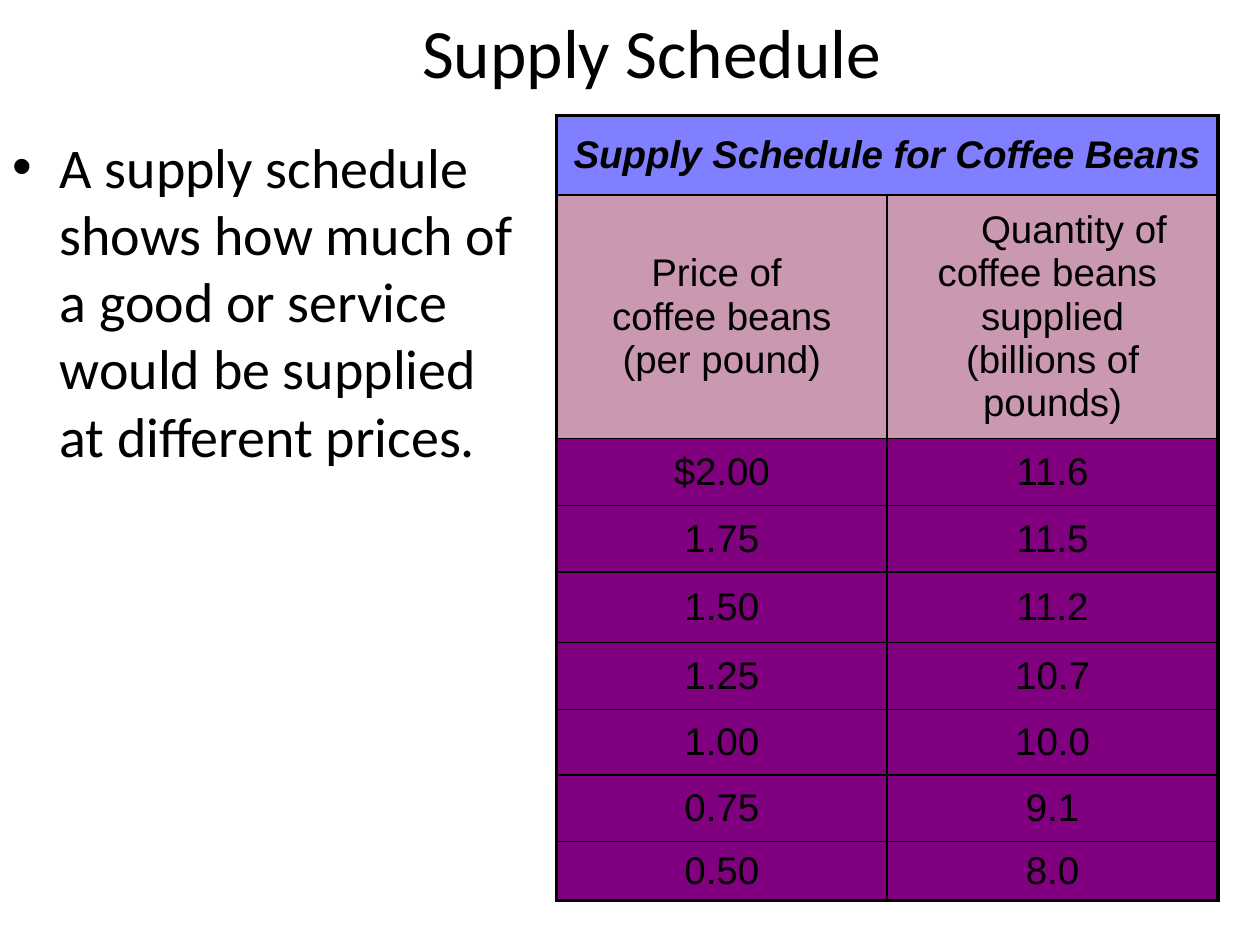
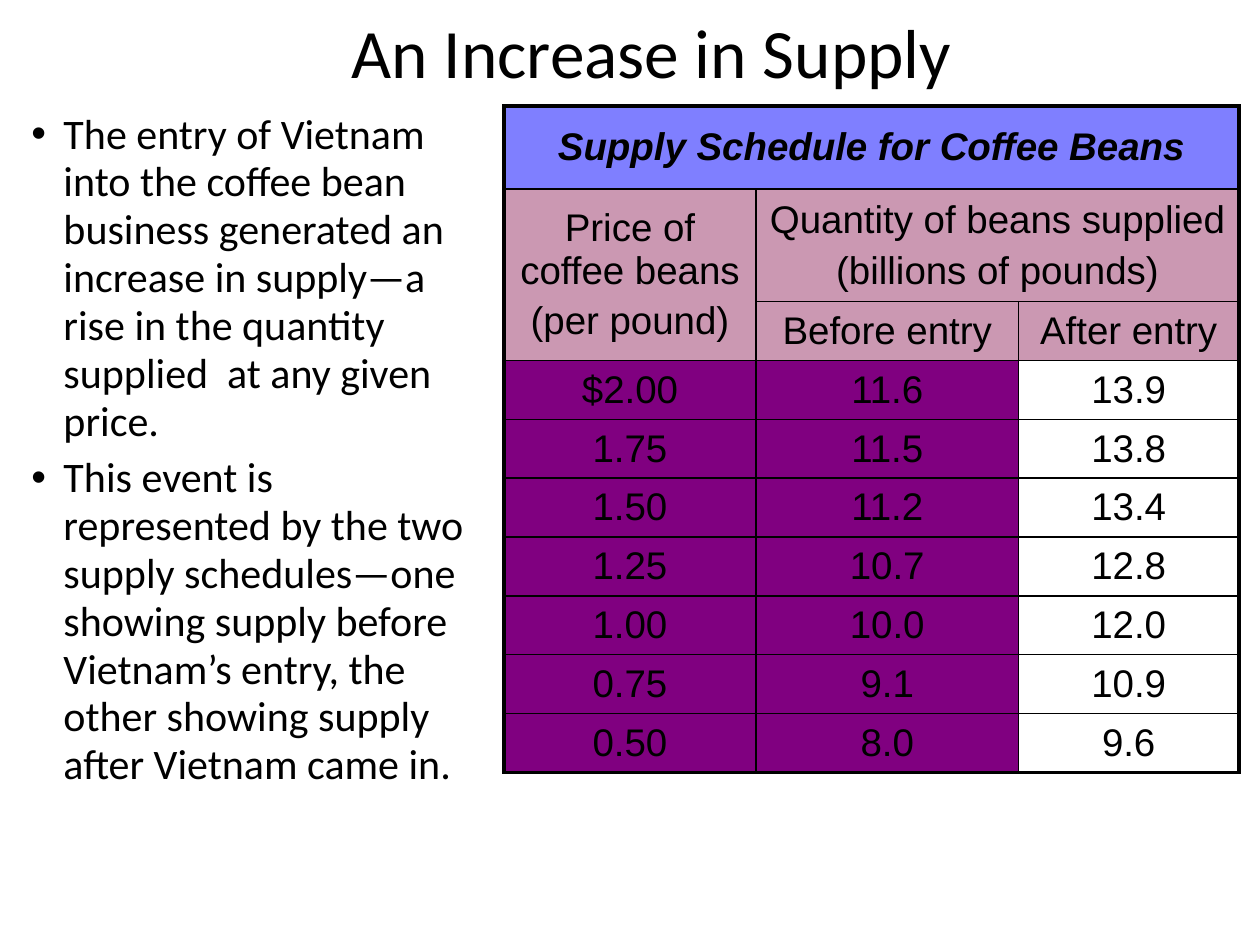
from dataclasses import dataclass

from lxml import etree
from pptx import Presentation
from pptx.dml import color as col
from pptx.enum import text as t
from pptx.oxml import ns
from pptx.util import Pt


@dataclass(frozen=True)
class Theme:
    ink: str = "000000"
    blue: str = "0000FF"
    rose: str = "993366"
    plum: str = "800080"
    tint: int = 50
    sans: str = "Calibri"
    grid: str = "Arial"
    title: float = 39.6
    cell: float = 22
    thick: float = 2.25
    thin: float = 1
    gap: float = 0.2
    plain: str = "{2D5ABB26-0587-4C30-8999-92F81FD0307C}"


@dataclass(frozen=True)
class Box:
    left: float
    top: float
    width: float
    height: float


@dataclass(frozen=True)
class Body:
    box: Box
    items: tuple
    size: float
    indent: float
    lead: float = 1


@dataclass(frozen=True)
class Cell:
    row: int
    col: int
    lines: tuple
    fill: str = ""
    tint: int = 100
    down: int = 1
    over: int = 1
    bold: bool = False
    space: bool = False
    shift: float = 0


@dataclass(frozen=True)
class Grid:
    left: float
    top: float
    cols: tuple
    rows: tuple
    cells: tuple


@dataclass(frozen=True)
class Page:
    title: str
    body: Body
    grid: Grid


THEME = Theme()
TITLE = Box(27.4, 0, 690, 57.6)
CAPTION = "Supply Schedule for Coffee Beans"
PRICES = ("$2.00", "1.75", "1.50", "1.25", "1.00", "0.75", "0.50")
BEFORE = ("11.6", "11.5", "11.2", "10.7", "10.0", "9.1", "8.0")
AFTER = ("13.9", "13.8", "13.4", "12.8", "12.0", "10.9", "9.6")


def banner(over: int) -> Cell:
    return Cell(0, 0, (CAPTION,), THEME.blue, THEME.tint, over=over, bold=True)


def header(row: int, place: int, *lines: str, **more) -> Cell:
    return Cell(row, place, lines, THEME.rose, THEME.tint, **more)


def column(first: int, place: int, values: tuple, fill: str = "") -> tuple:
    return tuple(Cell(first + n, place, (value,), fill)
                 for n, value in enumerate(values))


def figures(first: int) -> tuple:
    return (column(first, 0, PRICES, THEME.plum)
            + column(first, 1, BEFORE, THEME.plum))


PAGES = (
    Page(
        "Supply Schedule",
        Body(Box(0, 72, 312, 426), (
            "A supply schedule shows how much of a good or service would be "
            "supplied at different prices.",), 32, 27),
        Grid(318, 66, (189, 189),
             (45.4, 130.3, 38.2, 38.2, 40.3, 38.2, 37.4, 38.2, 31.7),
             (banner(2),
              header(1, 0, "Price of ", "coffee beans", "(per pound)"),
              header(1, 1, "Quantity of", "coffee beans ", "supplied",
                     "(billions of pounds)", shift=24.5),
              *figures(2)))),
    Page(
        "An Increase in Supply",
        Body(Box(10.8, 59.8, 276, 462), (
            "The entry of Vietnam into the coffee bean business generated an "
            "increase in supply—a rise in the quantity supplied  at any given "
            "price.",
            "This event is represented by the two supply schedules—one showing "
            "supply before Vietnam’s entry, the other showing supply after "
            "Vietnam came in."), 24, 18.4, 0.95),
        Grid(288, 60.5, (144, 150, 126),
             (47.5, 60.5) + (31.7,) * 5 + (33.1, 31.7, 31.7),
             (banner(3),
              header(1, 0, "Price of coffee beans ", "(per pound)",
                     down=2, space=True),
              header(1, 1, "Quantity of beans supplied ",
                     "(billions of pounds)", over=2, space=True),
              header(2, 1, "Before entry"),
              header(2, 2, "After entry"),
              *figures(3),
              *column(3, 2, AFTER)))),
)


def write(para, words: str, font: str, size: float, bold: bool = False) -> None:
    run = para.add_run()
    run.text = words
    run.font.name = font
    run.font.size = Pt(size)
    run.font.bold = run.font.italic = bold
    run.font.color.rgb = col.RGBColor.from_string(THEME.ink)


def paras(frame, count: int) -> list:
    return [frame.paragraphs[0]] + [frame.add_paragraph()
                                    for _ in range(count - 1)]


def sub(parent, tag: str, **attrs: str):
    return etree.SubElement(parent, ns.qn(tag), attrs)


def frame_at(slide, box: Box):
    shape = slide.shapes.add_textbox(
        Pt(box.left), Pt(box.top), Pt(box.width), Pt(box.height))
    shape.text_frame.word_wrap = True
    return shape.text_frame


def draw_title(slide, words: str) -> None:
    frame = frame_at(slide, TITLE)
    frame.vertical_anchor = t.MSO_ANCHOR.MIDDLE
    para = frame.paragraphs[0]
    para.alignment = t.PP_ALIGN.CENTER
    write(para, words, THEME.sans, THEME.title)


def draw_body(slide, body: Body) -> None:
    frame = frame_at(slide, body.box)
    for para, words in zip(paras(frame, len(body.items)), body.items):
        para.line_spacing = body.lead
        para.space_before = Pt(body.size * THEME.gap)
        props = para._p.get_or_add_pPr()
        props.set("marL", str(Pt(body.indent)))
        props.set("indent", str(-Pt(body.indent)))
        sub(props, "a:buFont", typeface="Arial")
        sub(props, "a:buChar", char="•")
        write(para, words, THEME.sans, body.size)


def edge(props, tag: str, outer: bool) -> None:
    line = sub(props, tag, w=str(Pt(THEME.thick if outer else THEME.thin)))
    sub(sub(line, "a:solidFill"), "a:srgbClr", val=THEME.ink)


def paint(cell, item: Cell, grid: Grid) -> None:
    props = cell._tc.get_or_add_tcPr()
    edge(props, "a:lnL", item.col == 0)
    edge(props, "a:lnR", item.col + item.over == len(grid.cols))
    edge(props, "a:lnT", item.row == 0)
    edge(props, "a:lnB", item.row + item.down == len(grid.rows))
    if not item.fill:
        cell.fill.background()
        return
    cell.fill.solid()
    cell.fill.fore_color.rgb = col.RGBColor.from_string(item.fill)
    if item.tint < 100:
        shade = props.find(ns.qn("a:solidFill")).find(ns.qn("a:srgbClr"))
        sub(shade, "a:alpha", val=str(item.tint * 1000))


def draw_cell(table, item: Cell, grid: Grid) -> None:
    cell = table.cell(item.row, item.col)
    if item.down * item.over > 1:
        cell.merge(table.cell(item.row + item.down - 1,
                              item.col + item.over - 1))
    cell.vertical_anchor = t.MSO_ANCHOR.MIDDLE
    lines = paras(cell.text_frame, len(item.lines))
    for para, words in zip(lines, item.lines):
        para.alignment = t.PP_ALIGN.CENTER
        if item.space:
            para.space_before = Pt(THEME.cell * THEME.gap)
        write(para, words, THEME.grid, THEME.cell, item.bold)
    if item.shift:
        lines[0]._p.get_or_add_pPr().set("marL", str(Pt(item.shift)))
    paint(cell, item, grid)


def draw_grid(slide, grid: Grid) -> None:
    table = slide.shapes.add_table(
        len(grid.rows), len(grid.cols), Pt(grid.left), Pt(grid.top),
        Pt(sum(grid.cols)), Pt(sum(grid.rows))).table
    table.first_row = table.horz_banding = False
    table._tbl.tblPr.find(ns.qn("a:tableStyleId")).text = THEME.plain
    for place, width in zip(table.columns, grid.cols):
        place.width = Pt(width)
    for row, height in zip(table.rows, grid.rows):
        row.height = Pt(height)
    for item in grid.cells:
        draw_cell(table, item, grid)


def main() -> None:
    deck = Presentation()
    deck.slide_width, deck.slide_height = Pt(720), Pt(540)
    for page in PAGES:
        slide = deck.slides.add_slide(deck.slide_layouts[6])
        draw_title(slide, page.title)
        draw_body(slide, page.body)
        draw_grid(slide, page.grid)
    deck.save("out.pptx")


if __name__ == "__main__":
    main()
